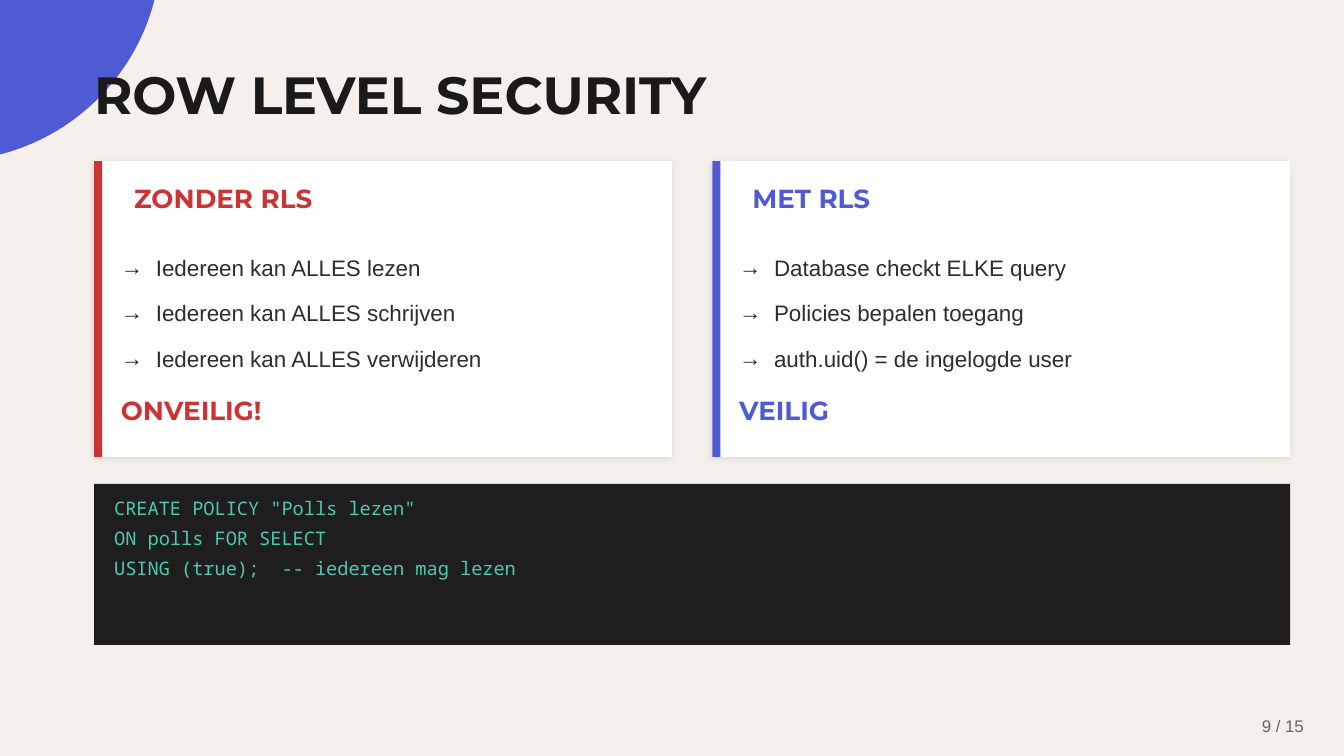
import pptx
import pptx.util
import pptx.dml.color
import pptx.enum.shapes
import pptx.enum.text
import pptx.oxml
import pptx.oxml.ns
import lxml.etree

Inches = pptx.util.Inches
Pt = pptx.util.Pt
qn = pptx.oxml.ns.qn
Kind = pptx.enum.shapes.MSO_SHAPE
Anchor = pptx.enum.text.MSO_ANCHOR
Align = pptx.enum.text.PP_ALIGN


def hue(code):
    return pptx.dml.color.RGBColor.from_string(code)


def write(shape, place, lines, size, font, code, bold=False, inset=True, middle=True):
    shape.left, shape.top, shape.width, shape.height = [Inches(n) for n in place]
    frame = shape.text_frame
    frame.text = "\n".join(lines)
    frame.word_wrap = True
    frame.auto_size = pptx.enum.text.MSO_AUTO_SIZE.NONE
    frame.vertical_anchor = Anchor.MIDDLE if middle else Anchor.TOP
    if not inset:
        frame.margin_left = frame.margin_right = 0
        frame.margin_top = frame.margin_bottom = 0
    for para in frame.paragraphs:
        para.alignment = Align.LEFT
        for run in para.runs:
            run.font.size = Pt(size)
            run.font.name = font
            run.font.bold = bold
            run.font.color.rgb = hue(code)
    return frame.paragraphs


deck = pptx.Presentation()
deck.slide_width = Inches(10)
deck.slide_height = Inches(10 * 9 / 16)
slide = deck.slides.add_slide(deck.slide_layouts[5])
slide.background.fill.solid()
slide.background.fill.fore_color.rgb = hue("F5F0EB")
shapes = slide.shapes

red, blue, white = "CC3333", "4F5BD5", "FFFFFF"
blocks = [
    (Kind.OVAL, -2, -2, 3.2, 3.2, blue),
    (Kind.RECTANGLE, 0.7, 1.2, 4.3, 2.2, white),
    (Kind.RECTANGLE, 0.7, 1.2, 0.06, 2.2, red),
    (Kind.RECTANGLE, 5.3, 1.2, 4.3, 2.2, white),
    (Kind.RECTANGLE, 5.3, 1.2, 0.06, 2.2, blue),
    (Kind.RECTANGLE, 0.7, 3.6, 8.9, 1.2, "1E1E1E"),
]
for kind, x, y, w, h, code in blocks:
    block = shapes.add_shape(kind, Inches(x), Inches(y), Inches(w), Inches(h))
    block.fill.solid()
    block.fill.fore_color.rgb = hue(code)
    block.line.fill.background()
    block.shadow.inherit = False
    if code == white:
        effects = block.element.spPr.find(qn("a:effectLst"))
        shade = lxml.etree.SubElement(
            effects, qn("a:outerShdw"), blurRad=str(Pt(4)), dist=str(Pt(1)),
            dir=str(135 * 60000), algn="bl", rotWithShape="0")
        black = lxml.etree.SubElement(shade, qn("a:srgbClr"), val="000000")
        lxml.etree.SubElement(black, qn("a:alpha"), val="10000")

title = shapes.title
title.element.getparent().append(title.element)
write(title, (0.7, 0.4, 8.5, 0.6), ["ROW LEVEL SECURITY"], 28, "Montserrat", "1A1A1A",
      bold=True, inset=False)

cards = [
    (0.9, red, "ZONDER RLS",
     ["Iedereen kan ALLES lezen", "Iedereen kan ALLES schrijven",
      "Iedereen kan ALLES verwijderen"], "ONVEILIG!"),
    (5.5, blue, "MET RLS",
     ["Database checkt ELKE query", "Policies bepalen toegang",
      "auth.uid() = de ingelogde user"], "VEILIG"),
]
for x, code, head, points, verdict in cards:
    write(shapes.add_textbox(0, 0, 0, 0), (x, 1.3, 3, 0.35), [head], 14, "Montserrat",
          code, bold=True)
    paras = write(shapes.add_textbox(0, 0, 0, 0), (x, 1.75, 3.9, 1.5),
                  points + [verdict], 12, "Arial", "2D2D2D", inset=False, middle=False)
    for para in paras:
        para.line_spacing = 1.7
    for para in paras[:-1]:
        props = para._p.get_or_add_pPr()
        props.set("marL", str(Inches(0.26)))
        props.set("indent", str(-Inches(0.26)))
        lxml.etree.SubElement(props, qn("a:buFont"), typeface="Arial")
        lxml.etree.SubElement(props, qn("a:buChar"), char="→")
    font = paras[-1].runs[0].font
    font.size = Pt(14)
    font.name = "Montserrat"
    font.bold = True
    font.color.rgb = hue(code)

query = [
    'CREATE POLICY "Polls lezen"',
    "ON polls FOR SELECT",
    "USING (true);  -- iedereen mag lezen",
]
paras = write(shapes.add_textbox(0, 0, 0, 0), (0.85, 3.7, 8.6, 1), query, 10,
              "Noto Sans Mono", "4EC9B0", inset=False, middle=False)
for para in paras:
    para.space_after = Pt(4)

paras = write(shapes.add_textbox(0, 0, 0, 0), (9, 5.25, 0.8, 0.3), ["9 / 15"], 9,
              "Arial", "666666")
paras[0].alignment = Align.RIGHT

deck.save("out.pptx")
